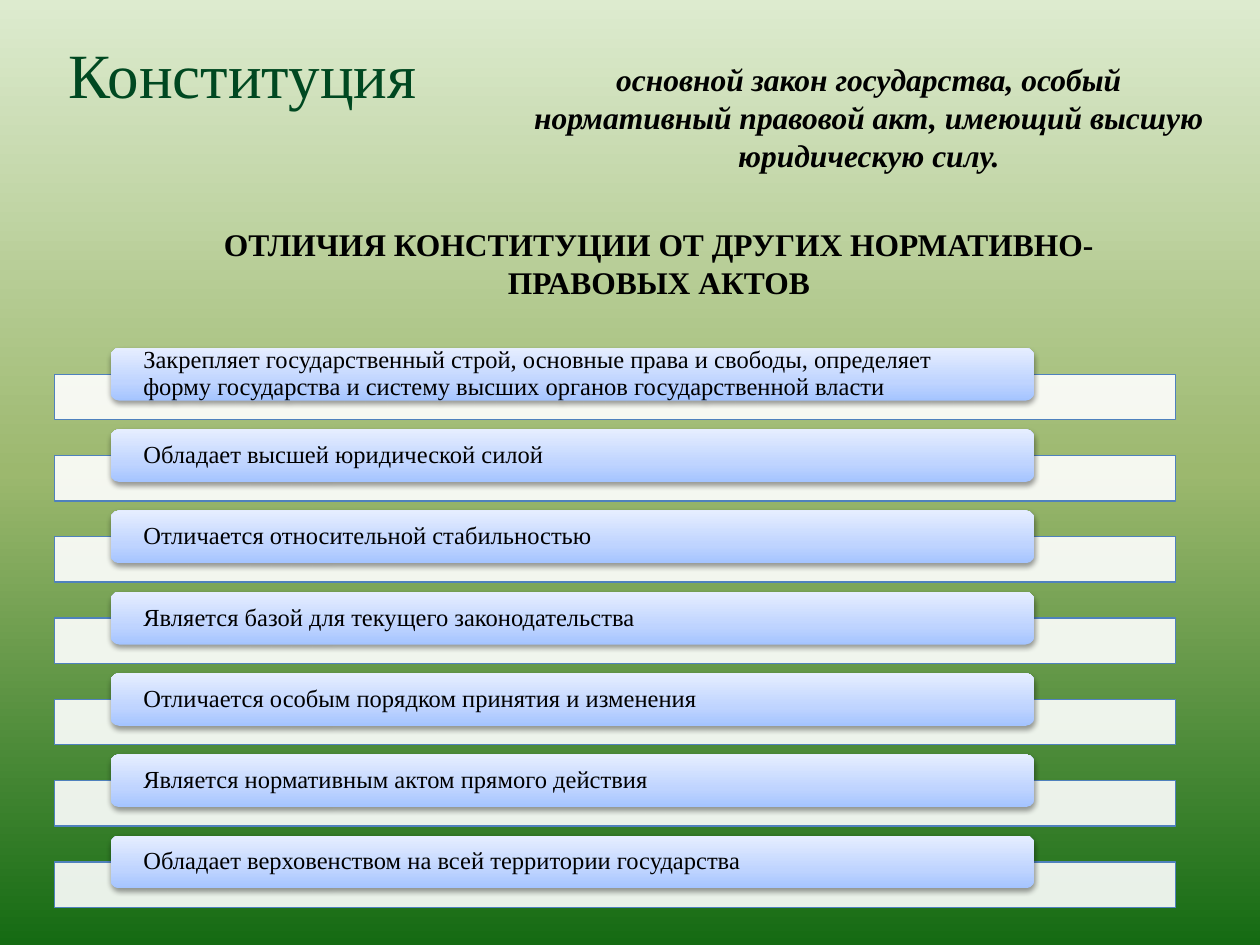
from lxml import etree
from pptx import Presentation, util as u
from pptx.dml.color import RGBColor
from pptx.enum import shapes, text
from pptx.oxml import parse_xml
from pptx.oxml.ns import nsdecls, qn

COLORS = {
    "title": "004821", "title_edge": "00B050", "ink": "000000",
    "bar": "FFFFFF", "bar_edge": "4F81BD",
}
PAGE_STOPS = [(0, "DDEBCF"), (50, "9CB86E"), (100, "156B13")]
CARD_STOPS = [(0, "A4C4FF"), (35, "BFD4FF"), (100, "E6EEFF")]

FEATURES = [
    "Закрепляет государственный строй, основные права и свободы, определяет "
    "форму государства и систему высших органов государственной власти",
    "Обладает высшей юридической силой",
    "Отличается относительной стабильностью",
    "Является базой для текущего законодательства",
    "Отличается особым порядком принятия и изменения",
    "Является нормативным актом прямого действия",
    "Обладает верховенством на всей территории государства",
]
FIRST_CARD_TOP, ROW_STEP, BAR_DROP = 198.8, 46.45, 15.1


def rgb(name):
    return RGBColor.from_string(COLORS[name])


def set_all(target, values):
    for name, value in values.items():
        setattr(target, name, value)


class SlideBuilder:
    """Holds the font and the current slide; lengths are in points."""

    def __init__(self, page, font="Times New Roman"):
        self.page = page
        self.font = font

    def gradient(self, fill, root, stops, angle):
        """Fill with any number of stops; angle runs counter-clockwise."""
        fill.gradient()
        fill.gradient_angle = angle
        stop_list = next(root.iter(qn("a:gsLst")))
        for stop in list(stop_list):
            stop_list.remove(stop)
        for percent, color in stops:
            stop = etree.SubElement(stop_list, qn("a:gs"), pos=str(percent * 1000))
            etree.SubElement(stop, qn("a:srgbClr"), val=color)

    def background(self, stops):
        self.gradient(self.page.background.fill, self.page._element, stops, 270)

    def add_words(self, box, words, size, color="ink", align="CENTER", spacing=1.0,
                  **style):
        para = box.text_frame.paragraphs[0]
        set_all(para, {"alignment": getattr(text.PP_ALIGN, align),
                       "line_spacing": spacing})
        span = para.add_run()
        span.text = words
        set_all(span.font, {"name": self.font, "size": u.Pt(size), **style})
        span.font.color.rgb = rgb(color)
        return span

    def label(self, place, words, size, wrap=True, **style):
        box = self.page.shapes.add_textbox(*map(u.Pt, place))
        set_all(box.text_frame, {"word_wrap": wrap,
                                 "auto_size": text.MSO_AUTO_SIZE.SHAPE_TO_FIT_TEXT})
        return self.add_words(box, words, size, **style)

    def outline(self, span, color, width):
        line = parse_xml(
            f'<a:ln {nsdecls("a")} w="{u.Pt(width)}"><a:solidFill>'
            f'<a:srgbClr val="{COLORS[color]}"/></a:solidFill></a:ln>')
        span.font._element.insert(0, line)

    def shape(self, kind, place):
        box = self.page.shapes.add_shape(kind, *map(u.Pt, place))
        box.shadow.inherit = False
        return box

    def bar(self, place):
        bar = self.shape(shapes.MSO_SHAPE.RECTANGLE, place)
        bar.fill.solid()
        bar.fill.fore_color.rgb = rgb("bar")
        color = next(bar._element.spPr.iter(qn("a:srgbClr")))
        etree.SubElement(color, qn("a:alpha"), val="90000")
        bar.line.color.rgb = rgb("bar_edge")
        bar.line.width = u.Pt(0.75)

    def card(self, place, words):
        card = self.shape(shapes.MSO_SHAPE.ROUNDED_RECTANGLE, place)
        self.gradient(card.fill, card._element, CARD_STOPS, 90)
        card.line.fill.background()
        effects = card._element.spPr.find(qn("a:effectLst"))
        effects.append(parse_xml(
            f'<a:outerShdw {nsdecls("a")} blurRad="{u.Pt(3.1)}" dist="{u.Pt(1.6)}" '
            f'dir="5400000" rotWithShape="0"><a:srgbClr val="{COLORS["ink"]}">'
            '<a:alpha val="38000"/></a:srgbClr></a:outerShdw>'))
        set_all(card.text_frame, {
            "word_wrap": True, "vertical_anchor": text.MSO_ANCHOR.MIDDLE,
            "margin_left": u.Pt(17.3), "margin_right": u.Pt(17.3),
            "margin_top": 0, "margin_bottom": 0})
        self.add_words(card, words, 14, align="LEFT", spacing=0.9)


def main():
    deck = Presentation()
    set_all(deck, {"slide_width": u.Pt(720), "slide_height": u.Pt(540)})
    builder = SlideBuilder(deck.slides.add_slide(deck.slide_layouts[6]))
    builder.background(PAGE_STOPS)

    title = builder.label((31, 16.6, 215.3, 51), "Конституция", 36,
                          wrap=False, color="title")
    builder.outline(title, "title_edge", 1.45)
    builder.label((286.6, 31, 419.8, 72.7),
                  "основной закон государства, особый нормативный правовой акт, "
                  "имеющий высшую юридическую силу.", 18, bold=True, italic=True)
    builder.label((70.6, 125.3, 612, 51),
                  "ОТЛИЧИЯ КОНСТИТУЦИИ ОТ ДРУГИХ НОРМАТИВНО-ПРАВОВЫХ АКТОВ",
                  18, bold=True)

    for row, feature in enumerate(FEATURES):
        top = FIRST_CARD_TOP + row * ROW_STEP
        builder.bar((31, top + BAR_DROP, 640.8, 25.9))
        builder.card((63.2, top, 527.8, 30.2), feature)

    deck.save("out.pptx")


if __name__ == "__main__":
    main()
